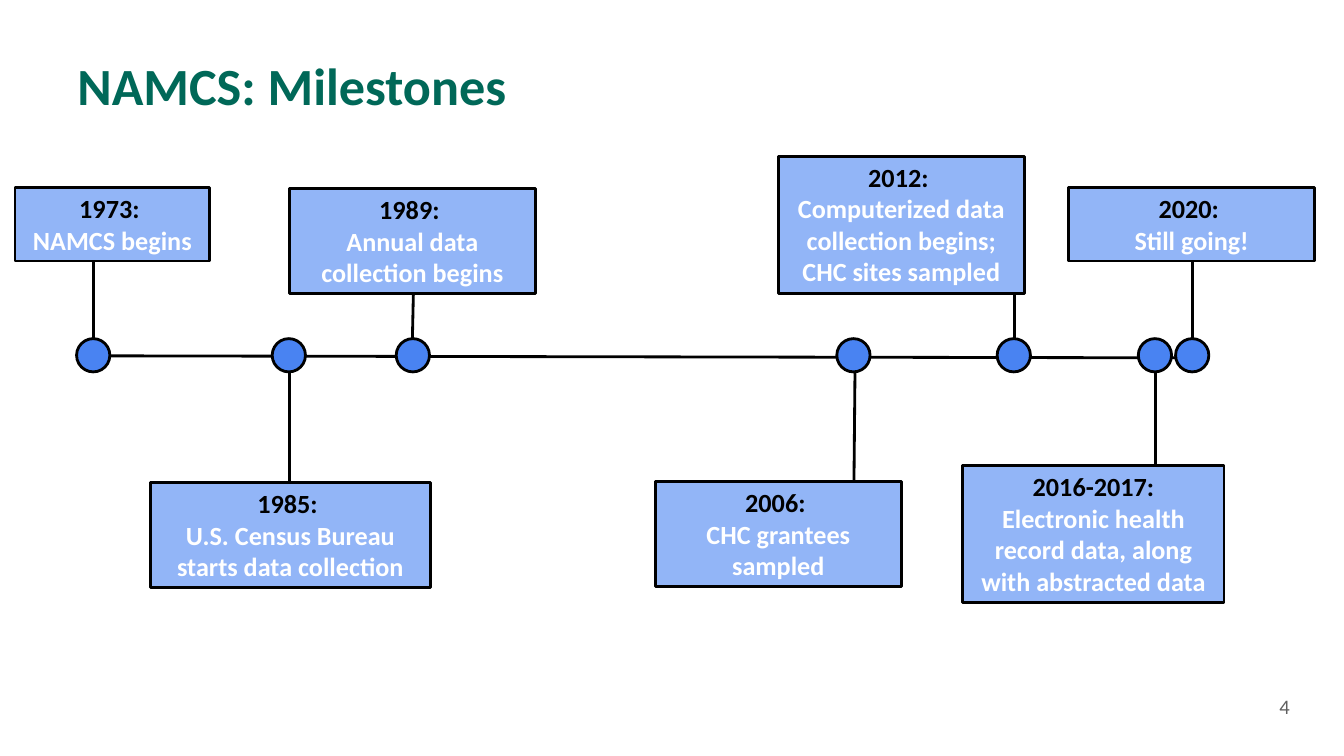
from lxml import etree
from pptx import Presentation
from pptx.dml.color import RGBColor
from pptx.enum import shapes, text
from pptx.oxml import ns
from pptx import util as u

PX = 9144  # 100 px to the inch
COLORS = {"title": "006858", "number": "5F5F5F", "box": "92B5F7",
          "dot": "4983F2", "ink": "000000", "event": "FFFFFF"}


def write(frame, lines, frame_format, font_format, align):
    """Fill a text frame with (wording, colour name) paragraphs."""
    for name, value in frame_format.items():
        setattr(frame, name, value)
    for index, (wording, color) in enumerate(lines):
        paragraph = frame.paragraphs[0] if index == 0 else frame.add_paragraph()
        paragraph.alignment = align
        run = paragraph.add_run()
        run.text = wording
        for name, value in font_format.items():
            setattr(run.font, name, value)
        run.font.color.rgb = RGBColor.from_string(COLORS[color])


def outline(item):
    """Give a shape or connector the black 2 pt line."""
    item.line.color.rgb = RGBColor.from_string(COLORS["ink"])
    item.line.width = u.Pt(2)


deck = Presentation()
deck.slide_width, deck.slide_height = 1333 * PX, 750 * PX
slide = deck.slides.add_slide(deck.slide_layouts[6])

# Title and page number
title = slide.shapes.add_textbox(67 * PX, 30 * PX, 1200 * PX, 90 * PX)
write(title.text_frame, [("NAMCS: Milestones", "title")],
      {"word_wrap": True, "vertical_anchor": text.MSO_ANCHOR.BOTTOM},
      {"name": "Calibri", "size": u.Pt(37.3), "bold": True}, text.PP_ALIGN.LEFT)
title.text_frame.paragraphs[0].line_spacing = u.Pt(40)

page_number = slide.shapes.add_textbox(1259 * PX, 683 * PX, 55 * PX, 35 * PX)
write(page_number.text_frame, [("4", "number")], {"word_wrap": True},
      {"name": "Calibri", "size": u.Pt(14.7)}, text.PP_ALIGN.LEFT)

# Milestones: year, event lines, box (left, top, width, height),
# dot centre, leader (x at box, x at dot)
milestones = [
    ("1973: ", ["NAMCS begins"], (15, 186, 193, 73), 93, (93, 93)),
    ("1985: ", ["U.S. Census Bureau starts data collection"],
     (149, 479, 278, 104), 287, (287, 287)),
    ("1989: ", ["Annual data collection begins"],
     (287, 187, 244, 104), 410, (410, 409)),
    ("2006: ", ["CHC grantees sampled"], (650, 478, 244, 104), 847, (847, 848)),
    ("2012: ", ["Computerized data collection begins;", "CHC sites sampled"],
     (772, 155, 244, 136), 1006, (1006, 1006)),
    ("2016-2017:", ["Electronic health record data, along with abstracted data"],
     (955, 462, 259, 136), 1146, (1146, 1146)),
    ("2020: ", ["Still going!"], (1060, 186, 244, 73), 1183, (1183, 1183)),
]
DOT, DOT_TOP = 33, 336

# Time axis, then a leader from each box to its dot
lines = [(1171, 355, 93, 353)]
for year, events, (left, top, width, height), center, (box_x, dot_x) in milestones:
    above = top < DOT_TOP
    lines.append((box_x, top + height if above else top,
                  dot_x, DOT_TOP + 2 if above else DOT_TOP + DOT))
for ends in lines:
    line = slide.shapes.add_connector(shapes.MSO_CONNECTOR.STRAIGHT,
                                      *(end * PX for end in ends))
    outline(line)
    etree.SubElement(line._element.spPr, ns.qn("a:effectLst"))

# Dots and boxes
for year, events, box_place, center, leader in milestones:
    dot_place = (center - DOT // 2 - 1, DOT_TOP, DOT, DOT)
    dot, box = (slide.shapes.add_shape(kind, *(length * PX for length in place))
                for kind, place in ((shapes.MSO_SHAPE.FLOWCHART_CONNECTOR, dot_place),
                                    (shapes.MSO_SHAPE.RECTANGLE, box_place)))
    for shape, color in ((dot, "dot"), (box, "box")):
        shape.shadow.inherit = False
        shape.fill.solid()
        shape.fill.fore_color.rgb = RGBColor.from_string(COLORS[color])
        outline(shape)
    write(box.text_frame, [(year, "ink")] + [(event, "event") for event in events],
          {"word_wrap": True, "vertical_anchor": text.MSO_ANCHOR.TOP,
           "auto_size": text.MSO_AUTO_SIZE.SHAPE_TO_FIT_TEXT},
          {"name": "Calibri", "size": u.Pt(18.7), "bold": True},
          text.PP_ALIGN.CENTER)

deck.save("out.pptx")
